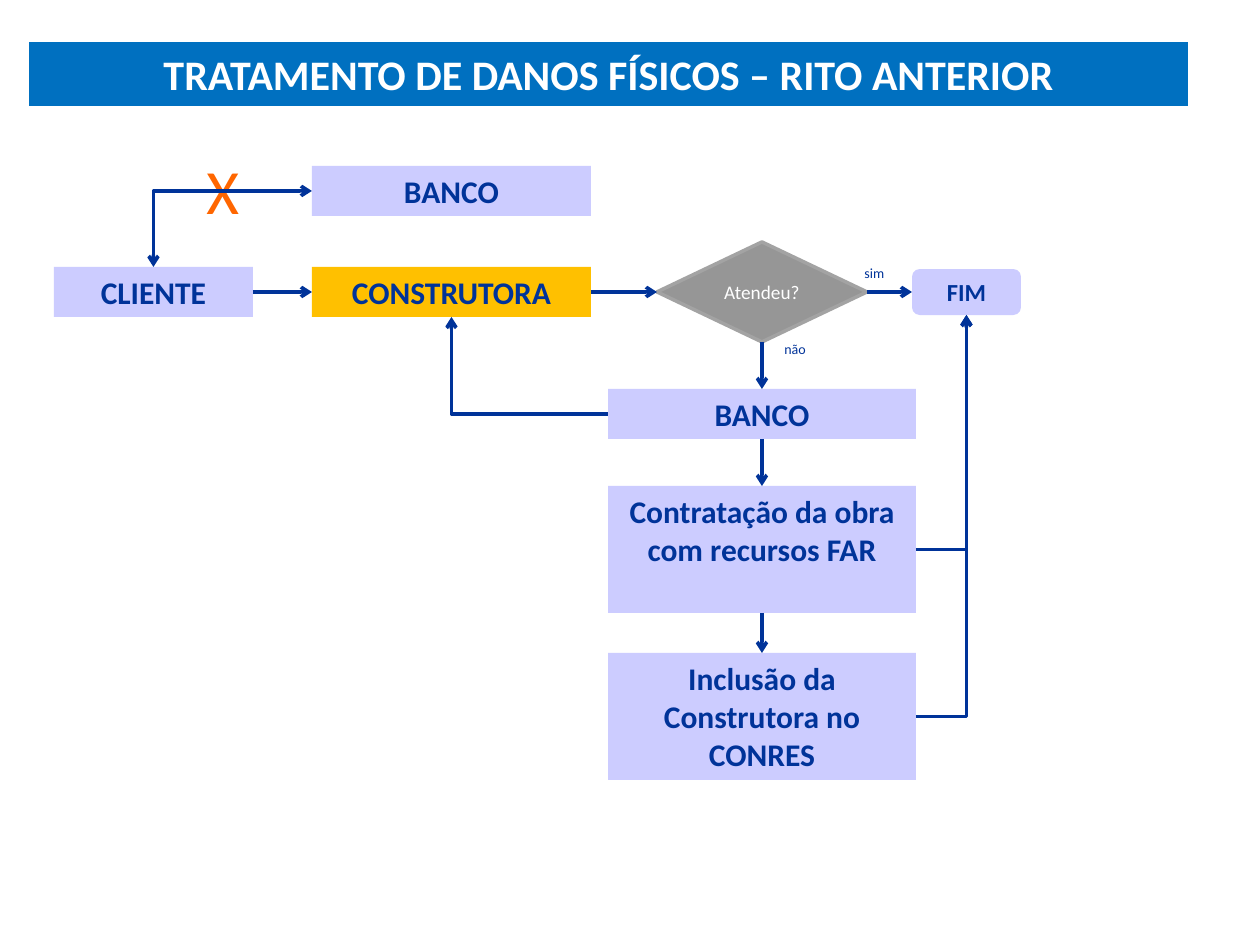
from lxml.etree import SubElement
from pptx import Presentation
from pptx.dml.color import RGBColor
from pptx.enum.shapes import MSO_CONNECTOR, MSO_SHAPE
from pptx.enum.text import MSO_ANCHOR, MSO_AUTO_SIZE, PP_ALIGN
from pptx.oxml.ns import qn
from pptx.util import Emu, Pt

PX = 914400 / 126
BLUE = RGBColor(0x00, 0x70, 0xC0)
NAVY = RGBColor(0x00, 0x33, 0x99)
LILAC = RGBColor(0xCC, 0xCC, 0xFF)
AMBER = RGBColor(0xFF, 0xC0, 0x00)
ORANGE = RGBColor(0xFF, 0x66, 0x00)
GRAY = RGBColor(0x96, 0x96, 0x96)
EDGE = RGBColor(0xA3, 0xA3, 0xA3)
WHITE = RGBColor(0xFF, 0xFF, 0xFF)

TITLE = "TRATAMENTO DE DANOS FÍSICOS – RITO ANTERIOR"
TOP, LEFT, BOTTOM, RIGHT = range(4)
RECT, ROUND, DIAMOND = (MSO_SHAPE.RECTANGLE, MSO_SHAPE.FLOWCHART_ALTERNATE_PROCESS,
                        MSO_SHAPE.FLOWCHART_DECISION)

# name: text, preset, (left, top, width, height), fill, text format
BOLD = dict(size=18, bold=True)
NODES = {
    "builder": ("CONSTRUTORA", RECT, (312, 267, 279, 50), AMBER, BOLD),
    "client": ("CLIENTE", RECT, (54, 267, 199, 50), LILAC, BOLD),
    "bank": ("BANCO", RECT, (312, 166, 279, 50), LILAC, BOLD),
    "bank_review": ("BANCO", RECT, (608, 389, 308, 50), LILAC, BOLD),
    "end": ("FIM", ROUND, (912, 269, 109, 46), LILAC, dict(size=14, bold=True)),
    "fixed": ("Atendeu?", DIAMOND, (657, 242, 210, 100), GRAY,
              dict(size=11, color=WHITE, anchor=MSO_ANCHOR.MIDDLE, wrap=False)),
    "works": ("Contratação da obra com recursos FAR", RECT, (608, 486, 308, 127), LILAC, BOLD),
    "listing": ("Inclusão da Construtora no CONRES", RECT, (608, 653, 308, 127), LILAC, BOLD),
}
LABELS = [
    ("X", (194, 145, 84, 89), dict(size=36, color=ORANGE)),
    ("sim", (852, 258, 49, 30), dict(size=8)),
    ("não", (772, 334, 49, 30), dict(size=8)),
]
# start, side, end, side
STRAIGHT = [
    ("client", RIGHT, "builder", LEFT),
    ("builder", RIGHT, "fixed", LEFT),
    ("fixed", RIGHT, "end", LEFT),
    ("fixed", BOTTOM, "bank_review", TOP),
    ("bank_review", BOTTOM, "works", TOP),
    ("works", BOTTOM, "listing", TOP),
]
BENT = [
    ("bank", LEFT, "client", TOP),
    ("bank_review", LEFT, "builder", BOTTOM),
    ("works", RIGHT, "end", BOTTOM),
    ("listing", RIGHT, "end", BOTTOM),
]
TWO_WAY = BENT[:1]


def emu(box):
    return [Emu(round(v * PX)) for v in box]


def write(sp, text, size, color=NAVY, bold=False, align=PP_ALIGN.CENTER,
          anchor=MSO_ANCHOR.TOP, wrap=True):
    tf = sp.text_frame
    tf.auto_size = MSO_AUTO_SIZE.NONE
    tf.word_wrap = wrap
    tf.vertical_anchor = anchor
    p = tf.paragraphs[0]
    p.alignment = align
    r = p.add_run()
    r.text = text
    r.font.name = "Calibri"
    r.font.size = Pt(size)
    r.font.bold = bold
    r.font.color.rgb = color


def connect(s, start, start_side, end, end_side, bent=False, two_way=False):
    kind = MSO_CONNECTOR.ELBOW if bent else MSO_CONNECTOR.STRAIGHT
    c = s.shapes.add_connector(kind, 0, 0, 0, 0)
    c.begin_connect(start, start_side)
    c.end_connect(end, end_side)
    c.line.color.rgb = NAVY
    c.line.width = Pt(2)
    spPr = c._element.spPr
    if bent:  # a single corner: across, then up or down
        spPr.find(qn("a:prstGeom")).set("prst", "bentConnector2")
    ln = c.line._get_or_add_ln()
    for tag in ("a:headEnd", "a:tailEnd") if two_way else ("a:tailEnd",):
        SubElement(ln, qn(tag), type="arrow")
    SubElement(spPr, qn("a:effectLst"))


prs = Presentation()
prs.slide_width, prs.slide_height = emu((1260, 945))
s = prs.slides.add_slide(prs.slide_layouts[5])

# Title bar
title = s.shapes.title
title.left, title.top, title.width, title.height = emu((29, 42, 1159, 64))
title.fill.solid()
title.fill.fore_color.rgb = BLUE
write(title, TITLE, size=24, color=WHITE, bold=True)

# Flowchart steps
nodes = {}
for name, (text, preset, box, fill, fmt) in NODES.items():
    sp = nodes[name] = s.shapes.add_shape(preset, *emu(box))
    sp.shadow.inherit = False
    sp.fill.solid()
    sp.fill.fore_color.rgb = fill
    if preset == DIAMOND:
        sp.line.color.rgb = EDGE
        sp.line.width = Pt(2)
    else:
        sp.line.fill.background()
    write(sp, text, **fmt)

# Branch labels and the cross
for text, box, fmt in LABELS:
    write(s.shapes.add_textbox(*emu(box)), text, align=PP_ALIGN.LEFT, wrap=False, **fmt)

# Arrows
for link in STRAIGHT + BENT:
    start, start_side, end, end_side = link
    connect(s, nodes[start], start_side, nodes[end], end_side,
            bent=link in BENT, two_way=link in TWO_WAY)

prs.save("out.pptx")
